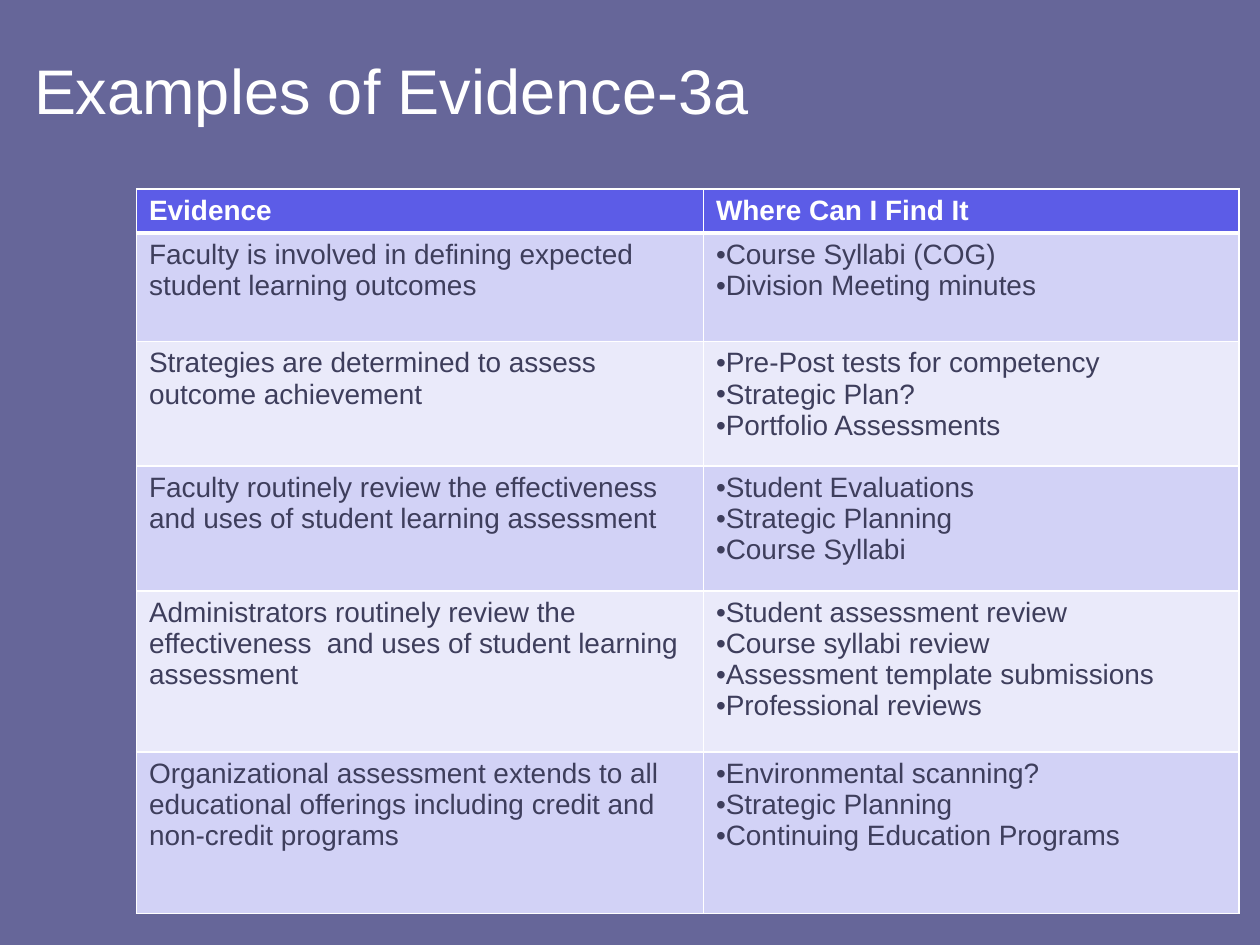
import pptx
import pptx.util
import pptx.dml.color
import pptx.enum.text
from pptx.oxml import parse_xml
from pptx.oxml.ns import nsdecls

Inches, Pt = pptx.util.Inches, pptx.util.Pt
white, ink = "FFFFFF", "3E3E5C"
head, bands = "5C5CE7", ("EAEAFA", "D2D2F6")


def paint(fill, hue):
    fill.solid()
    fill.fore_color.rgb = pptx.dml.color.RGBColor.from_string(hue)


def style(para, size, hue, bold=False):
    para.alignment = pptx.enum.text.PP_ALIGN.LEFT
    for run in para.runs:
        run.font.name = "Arial"
        run.font.size = Pt(size)
        run.font.bold = bold
        paint(run.font.fill, hue)


deck = pptx.Presentation()
deck.slide_width, deck.slide_height = Inches(10), Inches(7.5)
slide = deck.slides.add_slide(deck.slide_layouts[5])
paint(slide.background.fill, "666699")

# Title
title = slide.shapes.title
title.left, title.top = Inches(0.17), Inches(0.25)
title.width, title.height = Inches(9.67), Inches(0.92)
title.text_frame.text = "Examples of Evidence-3a"
title.text_frame.vertical_anchor = pptx.enum.text.MSO_ANCHOR.MIDDLE
style(title.text_frame.paragraphs[0], 36, white)

# Table content: evidence, then the places to find it
rows = [
    ("Evidence", ["Where Can I Find It"]),
    ("Faculty is involved in defining expected student learning outcomes",
     ["Course Syllabi (COG)", "Division Meeting minutes"]),
    ("Strategies are determined to assess outcome achievement",
     ["Pre-Post tests for competency", "Strategic Plan?",
      "Portfolio Assessments"]),
    ("Faculty routinely review the effectiveness  and uses of student "
     "learning assessment",
     ["Student Evaluations", "Strategic Planning", "Course Syllabi"]),
    ("Administrators routinely review the effectiveness  and uses of "
     "student learning assessment",
     ["Student assessment review", "Course syllabi review",
      "Assessment template submissions", "Professional reviews"]),
    ("Organizational assessment extends to all educational offerings "
     "including credit and non-credit programs",
     ["Environmental scanning?", "Strategic Planning",
      "Continuing Education Programs"]),
]
widths = (4.5, 4.25)
heights = (0.35, 0.86, 0.99, 0.99, 1.28, 1.28)

# Table grid
table = slide.shapes.add_table(
    len(rows), len(widths), Inches(13 / 12), Inches(1.5),
    Inches(sum(widths)), Inches(sum(heights))).table
for col, width in zip(table.columns, widths):
    col.width = Inches(width)
for row, height in zip(table.rows, heights):
    row.height = Inches(height)

# Table cells
for r, (claim, places) in enumerate(rows):
    for c, lines in enumerate(([claim], places)):
        cell = table.cell(r, c)
        cell.text_frame.text = "\n".join(lines)
        for para in cell.text_frame.paragraphs:
            if r and c:
                props = para._p.get_or_add_pPr()
                props.set("marL", "0")
                props.set("indent", "0")
                for mark in ('buFont {} typeface="Arial"',
                             'buChar {} char="•"'):
                    props.append(parse_xml(
                        f'<a:{mark.format(nsdecls("a"))}/>'))
            style(para, 16, ink if r else white, bold=r == 0)

        # Borders, with a heavy rule under the header
        edges = cell._tc.get_or_add_tcPr()
        for side in "LRTB":
            heavy = (r, side) in ((0, "B"), (1, "T"))
            edges.append(parse_xml(
                f'<a:ln{side} {nsdecls("a")} w="{Pt(3 if heavy else 1)}">'
                f'<a:solidFill><a:srgbClr val="{white}"/></a:solidFill>'
                f'</a:ln{side}>'))
        paint(cell.fill, bands[r % 2] if r else head)

deck.save("out.pptx")
